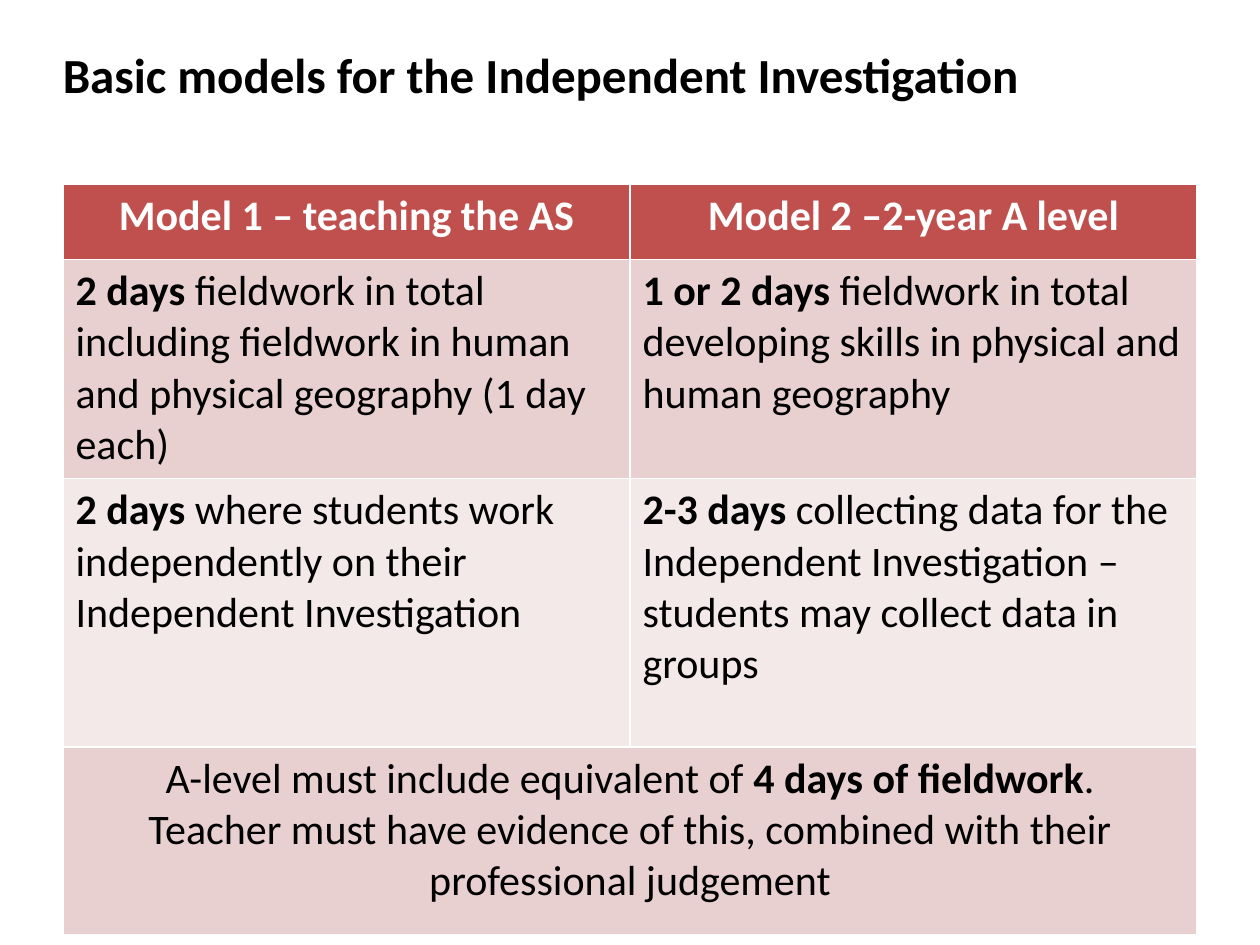
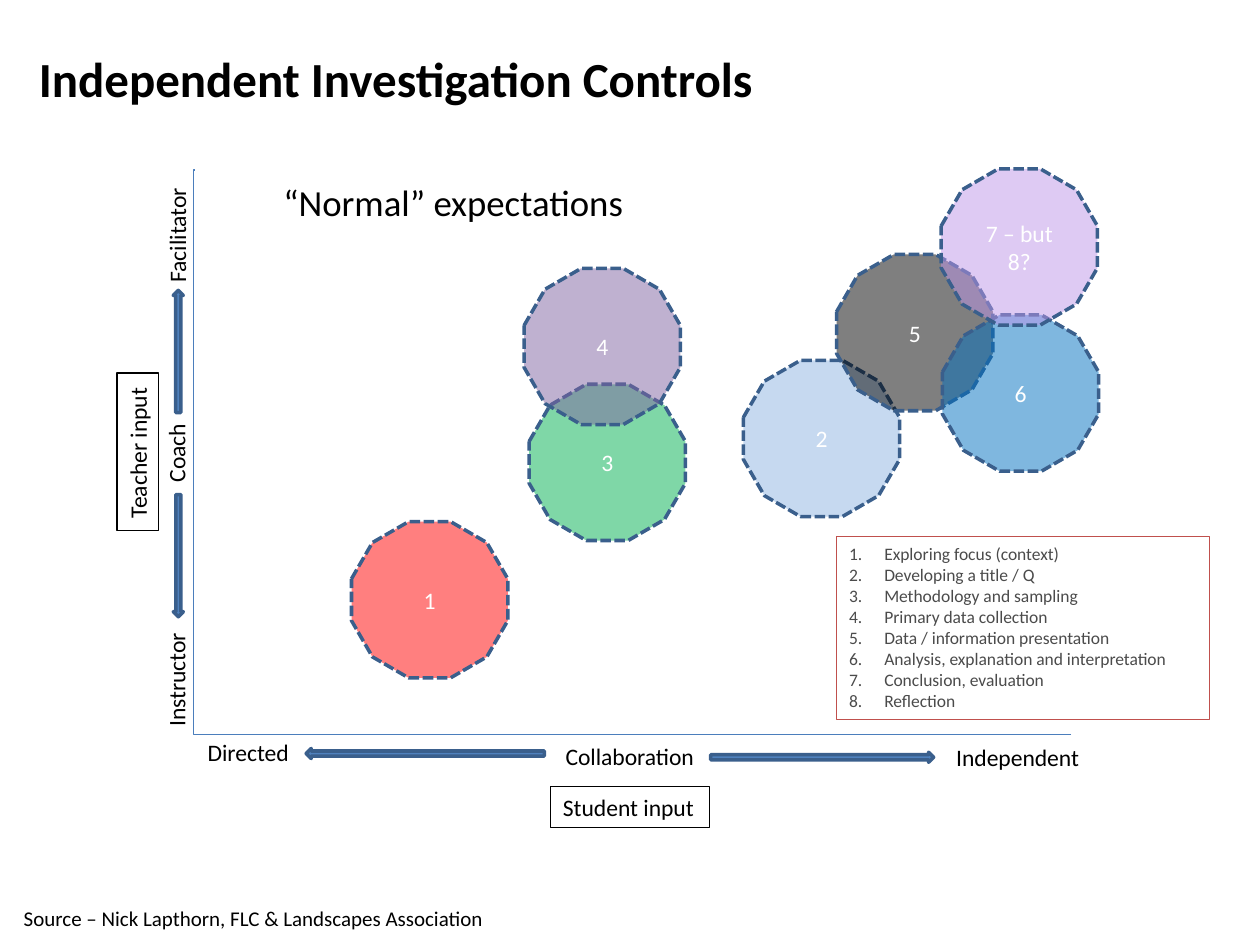
import lxml.etree
import pptx
import pptx.dml.color
import pptx.enum.dml
import pptx.enum.shapes
import pptx.enum.text
import pptx.oxml.ns
import pptx.util

RGBColor = pptx.dml.color.RGBColor
BLACK = RGBColor(0x00, 0x00, 0x00)
WHITE = RGBColor(0xFF, 0xFF, 0xFF)
GREY = RGBColor(0x4B, 0x4B, 0x4B)
RED = RGBColor(0xC0, 0x50, 0x4D)
ROSE = RGBColor(0xE8, 0xD0, 0xD0)
PALE_ROSE = RGBColor(0xF4, 0xE9, 0xE9)
AXIS_BLUE = RGBColor(0x4B, 0x7E, 0xBC)
ARROW_BLUE = RGBColor(0x4F, 0x81, 0xBD)
OUTLINE_BLUE = RGBColor(0x3A, 0x5F, 0x8C)
STAGE_RED = RGBColor(0xFF, 0x00, 0x00)
STAGE_SKY = RGBColor(0x8E, 0xB4, 0xE3)
STAGE_GREEN = RGBColor(0x00, 0xB0, 0x50)
STAGE_PURPLE = RGBColor(0x80, 0x64, 0xA2)
STAGE_BLUE = RGBColor(0x00, 0x70, 0xC0)
STAGE_LILAC = RGBColor(0xBE, 0x96, 0xE9)

FONT = "Calibri"
TITLE_SIZE = 28
TABLE_SIZE = 24
HEADING_SIZE = 21
LABEL_SIZE = 13.5
SOURCE_SIZE = 12
LEGEND_SIZE = 10
CENTER = pptx.enum.text.PP_ALIGN.CENTER
MIDDLE = pptx.enum.text.MSO_ANCHOR.MIDDLE
SHAPES = pptx.enum.shapes.MSO_SHAPE

deck = pptx.Presentation()
deck.slide_width = pptx.util.Inches(10)
deck.slide_height = pptx.util.Inches(7.5)
COLUMN = deck.slide_width // 100
ROW = deck.slide_height // 75


def write(para, spans, size, color):
    for text, bold in spans:
        span = para.add_run()
        span.text = text
        span.font.name = FONT
        span.font.size = pptx.util.Pt(size)
        span.font.bold = bold
        span.font.color.rgb = color


def add_text(page, place, text, size, bold=False, rotation=0, border=None):
    left, top, width, height = place
    box = page.shapes.add_textbox(
        int(left * COLUMN), int(top * ROW), int(width * COLUMN), int(height * ROW)
    )
    box.rotation = rotation
    box.text_frame.word_wrap = False
    if border is not None:
        box.line.color.rgb = border
        box.line.width = pptx.util.Pt(0.75)
    write(box.text_frame.paragraphs[0], [(text, bold)], size, BLACK)
    return box


pages = []
for title, place in [
    ("Basic models for the Independent Investigation", (4, 2.5, 91, 6.8)),
    ("Independent Investigation Controls", (2.1, 3.2, 92.2, 6)),
]:
    page = deck.slides.add_slide(deck.slide_layouts[6])
    title_box = add_text(page, place, title, TITLE_SIZE, bold=True)
    title_box.text_frame.word_wrap = True
    title_box.text_frame.vertical_anchor = MIDDLE
    pages.append(page)
models_page, controls_page = pages

row_heights = [6, 17.4, 21.3, 14.9]
row_fills = [RED, ROSE, PALE_ROSE, ROSE]
model_cells = [
    [
        [[("Model 1 – teaching the AS", True)]],
        [[("Model 2 –2-year A level", True)]],
    ],
    [
        [[
            ("2 days ", True),
            ("fieldwork in total including fieldwork in human and physical geography (1 day each)", False),
        ]],
        [[
            ("1 or 2 days ", True),
            ("fieldwork in total developing skills in physical and human geography", False),
        ]],
    ],
    [
        [[
            ("2 days ", True),
            ("where students work independently on their Independent Investigation", False),
        ]],
        [[
            ("2-3 days ", True),
            ("collecting data for the Independent Investigation – students may collect data in groups", False),
        ]],
    ],
    [
        [
            [
                ("A-level must include equivalent of ", False),
                ("4 days of fieldwork", True),
                (".", False),
            ],
            [("Teacher must have evidence of this, combined with their professional judgement", False)],
        ],
    ],
]
table = models_page.shapes.add_table(
    4, 2, 5 * COLUMN, int(14.6 * ROW), 90 * COLUMN, int(sum(row_heights) * ROW)
).table
table.horz_banding = False
table.cell(3, 0).merge(table.cell(3, 1))
for row, cells in enumerate(model_cells):
    table.rows[row].height = int(row_heights[row] * ROW)
    for column, paragraphs in enumerate(cells):
        cell = table.cell(row, column)
        cell.fill.solid()
        cell.fill.fore_color.rgb = row_fills[row]
        for number, spans in enumerate(paragraphs):
            para = cell.text_frame.paragraphs[0] if number == 0 else cell.text_frame.add_paragraph()
            if row in (0, 3):
                para.alignment = CENTER
            write(para, spans, TABLE_SIZE, WHITE if row == 0 else BLACK)

add_text(controls_page, (43.7, 62.4, 12.6, 3.3), "Student input", LABEL_SIZE, border=BLACK)
add_text(controls_page, (4.7, 34.2, 12.5, 3.3), "Teacher input", LABEL_SIZE, rotation=270, border=BLACK)

legend_lines = [
    "Exploring focus (context)",
    "Developing a title / Q",
    "Methodology and sampling",
    "Primary data collection",
    "Data / information presentation",
    "Analysis, explanation and interpretation",
    "Conclusion, evaluation",
    "Reflection",
]
legend = controls_page.shapes.add_textbox(
    int(66.4 * COLUMN), int(42.6 * ROW), int(29.6 * COLUMN), int(14.5 * ROW)
)
legend.text_frame.word_wrap = True
legend.fill.solid()
legend.fill.fore_color.rgb = WHITE
legend.line.color.rgb = RED
legend.line.width = pptx.util.Pt(0.75)
for number, line in enumerate(legend_lines):
    para = legend.text_frame.paragraphs[0] if number == 0 else legend.text_frame.add_paragraph()
    write(para, [(line, False)], LEGEND_SIZE, GREY)
    properties = para._p.get_or_add_pPr()
    properties.set("marL", str(int(2.8 * COLUMN)))
    properties.set("indent", str(int(-2.8 * COLUMN)))
    lxml.etree.SubElement(properties, pptx.oxml.ns.qn("a:buAutoNum"), type="arabicPeriod")

axes = controls_page.shapes.add_connector(
    pptx.enum.shapes.MSO_CONNECTOR.ELBOW,
    int(15.5 * COLUMN), int(13.5 * ROW), 85 * COLUMN, int(58.3 * ROW),
)
axes.line.color.rgb = AXIS_BLUE
axes.line.width = pptx.util.Pt(0.75)
axes_properties = axes._element.spPr
axes_properties.find(pptx.oxml.ns.qn("a:xfrm")).set("rot", "10800000")
guides = axes_properties.find(".//" + pptx.oxml.ns.qn("a:avLst"))
lxml.etree.SubElement(guides, pptx.oxml.ns.qn("a:gd"), name="adj1", fmla="val 100200")
lxml.etree.SubElement(axes_properties, pptx.oxml.ns.qn("a:effectLst"))

for text, left, top, width, rotation in [
    ("Directed", 15.5, 58.1, 8.6, 0),
    ("Independent", 74.9, 58.5, 11.9, 0),
    ("Collaboration", 43.9, 58.4, 12.4, 0),
    ("Instructor", 9.2, 52.2, 9.6, 270),
    ("Coach", 10.6, 34.2, 6.8, 270),
    ("Facilitator", 9.2, 16.9, 9.7, 270),
]:
    add_text(controls_page, (left, top, width, 3.3), text, LABEL_SIZE, rotation=rotation)

for left, top, width, rotation in [
    (9.3, 27.5, 9.7, 270),
    (9.3, 43.7, 9.7, 90),
    (24.3, 59.4, 18.9, 180),
    (56.4, 59.7, 17.7, 0),
]:
    arrow = controls_page.shapes.add_shape(
        SHAPES.RIGHT_ARROW, int(left * COLUMN), int(top * ROW), int(width * COLUMN), int(0.8 * ROW)
    )
    arrow.rotation = rotation
    arrow.shadow.inherit = False
    arrow.fill.solid()
    arrow.fill.fore_color.rgb = ARROW_BLUE
    arrow.line.color.rgb = OUTLINE_BLUE
    arrow.line.width = pptx.util.Pt(2)

add_text(controls_page, (21.5, 13.8, 29.3, 4.5), "“Normal” expectations", HEADING_SIZE)

for text, left, top, color in [
    ("1", 27.9, 41.4, STAGE_RED),
    ("2", 59, 28.6, STAGE_SKY),
    ("3", 42, 30.5, STAGE_GREEN),
    ("4", 41.6, 21.3, STAGE_PURPLE),
    ("5", 66.4, 20.2, BLACK),
    ("6", 74.8, 25, STAGE_BLUE),
    ("7 – but 8?", 74.7, 13.4, STAGE_LILAC),
]:
    stage = controls_page.shapes.add_shape(
        SHAPES.DODECAGON, int(left * COLUMN), int(top * ROW), int(12.4 * COLUMN), int(12.4 * ROW)
    )
    stage.shadow.inherit = False
    stage.fill.solid()
    stage.fill.fore_color.rgb = color
    tint = stage._element.spPr.find(pptx.oxml.ns.qn("a:solidFill"))[0]
    lxml.etree.SubElement(tint, pptx.oxml.ns.qn("a:alpha"), val="50000")
    stage.line.color.rgb = OUTLINE_BLUE
    stage.line.width = pptx.util.Pt(2)
    stage.line.dash_style = pptx.enum.dml.MSO_LINE.SQUARE_DOT
    stage.text_frame.vertical_anchor = MIDDLE
    para = stage.text_frame.paragraphs[0]
    para.alignment = CENTER
    write(para, [(text, False)], LABEL_SIZE, WHITE)

add_text(
    controls_page, (0.9, 71.4, 45, 3),
    "Source – Nick Lapthorn, FLC & Landscapes Association", SOURCE_SIZE,
)

deck.save("out.pptx")
